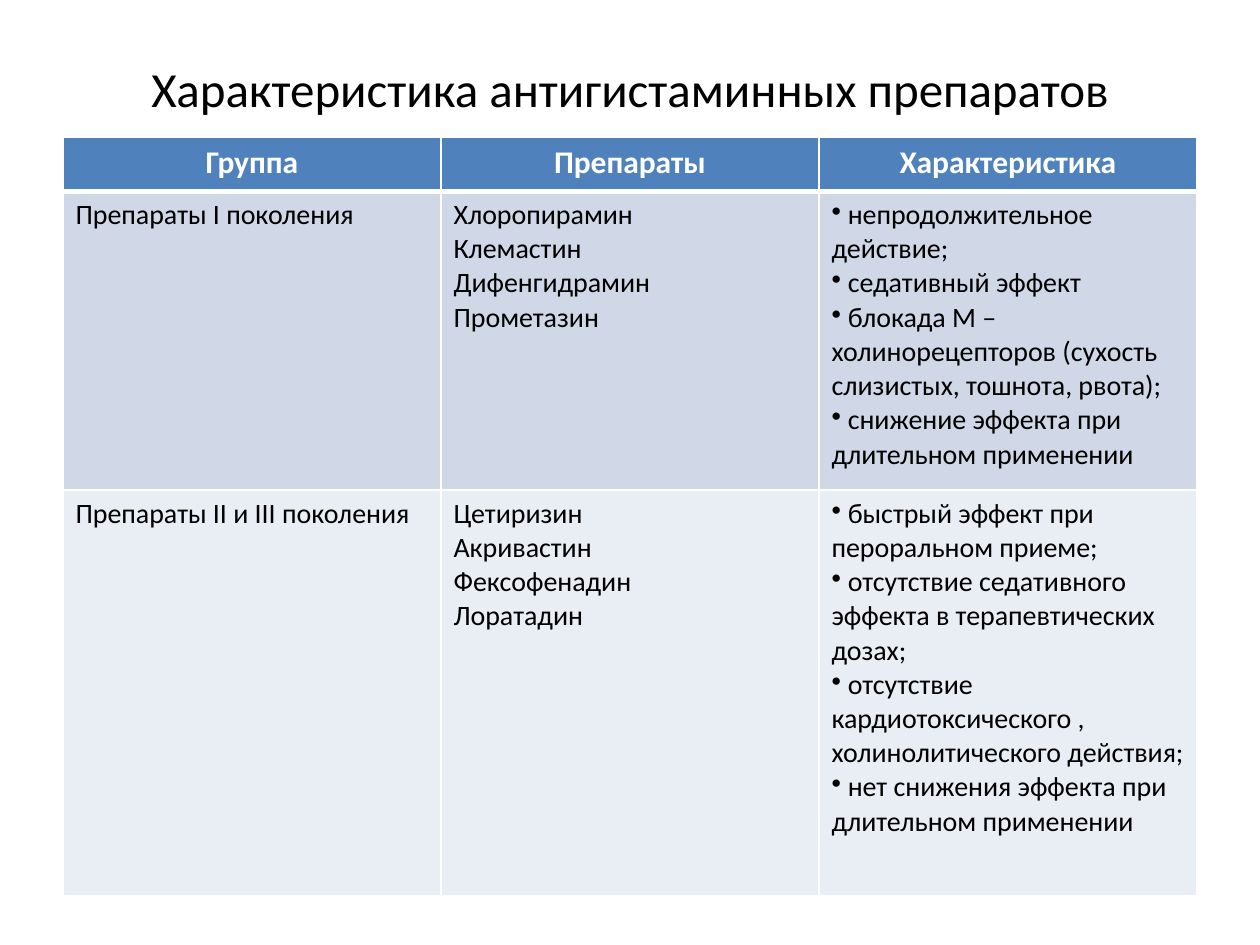
from dataclasses import dataclass

from lxml.etree import SubElement
from pptx import Presentation
from pptx.dml.color import RGBColor
from pptx.enum.text import MSO_ANCHOR, PP_ALIGN
from pptx.oxml.ns import qn
from pptx.util import Inches, Pt


@dataclass(frozen=True)
class Theme:
    font: str = "Calibri"
    title_size: int = 28
    header_size: int = 18
    body_size: int = 16
    ink: str = "000000"
    paper: str = "FFFFFF"
    header_fill: str = "4F81BD"
    band_fills: tuple = ("D0D8E8", "E9EDF4")
    thin_line: int = 1
    thick_line: int = 3


THEME = Theme()
TITLE = "Характеристика антигистаминных препаратов"
HEADERS = ("Группа", "Препараты", "Характеристика")
GROUPS = (
    (
        ("Препараты I поколения",),
        ("Хлоропирамин", "Клемастин", "Дифенгидрамин", "Прометазин"),
        (
            "непродолжительное действие;",
            "седативный эффект",
            "блокада М – холинорецепторов (сухость слизистых, тошнота, рвота);",
            "снижение эффекта при длительном применении",
        ),
    ),
    (
        ("Препараты II и III поколения",),
        ("Цетиризин", "Акривастин", "Фексофенадин", "Лоратадин"),
        (
            "быстрый эффект при пероральном приеме;",
            "отсутствие седативного эффекта в терапевтических дозах;",
            "отсутствие кардиотоксического , холинолитического действия;",
            "нет снижения эффекта при длительном применении",
        ),
    ),
)
ROW_HEIGHTS = (0.43, 2.37, 3.22)
BULLET_COLUMN = 2


def add_span(para, text, size, color, bold=False):
    span = para.add_run()
    span.text = text
    span.font.name = THEME.font
    span.font.size = Pt(size)
    span.font.bold = bold
    span.font.color.rgb = RGBColor.from_string(color)


def add_bullet(para):
    properties = para._p.get_or_add_pPr()
    properties.set("marL", "0")
    properties.set("indent", "0")
    SubElement(properties, qn("a:buChar"), char="•")


def set_borders(cell, top, bottom):
    properties = cell._tc.get_or_add_tcPr()
    widths = {"L": THEME.thin_line, "R": THEME.thin_line, "T": top, "B": bottom}
    for side, width in widths.items():
        line = SubElement(properties, qn(f"a:ln{side}"), w=str(Pt(width)))
        fill = SubElement(line, qn("a:solidFill"))
        SubElement(fill, qn("a:srgbClr"), val=THEME.paper)


def set_fill(cell, color):
    cell.fill.solid()
    cell.fill.fore_color.rgb = RGBColor.from_string(color)


def fill_header_cell(cell, text):
    set_borders(cell, THEME.thin_line, THEME.thick_line)
    set_fill(cell, THEME.header_fill)
    para = cell.text_frame.paragraphs[0]
    para.alignment = PP_ALIGN.CENTER
    add_span(para, text, THEME.header_size, THEME.paper, bold=True)


def fill_body_cell(cell, lines, color, top, bulleted):
    set_borders(cell, top, THEME.thin_line)
    set_fill(cell, color)
    frame = cell.text_frame
    for index, line in enumerate(lines):
        para = frame.add_paragraph() if index else frame.paragraphs[0]
        if bulleted:
            add_bullet(para)
            line = f" {line}"
        add_span(para, line, THEME.body_size, THEME.ink)


def place_title(page, left, top, width, height):
    title = page.shapes.title
    title.left, title.top, title.width, title.height = left, top, width, height
    frame = title.text_frame
    frame.vertical_anchor = MSO_ANCHOR.MIDDLE
    para = frame.paragraphs[0]
    para.alignment = PP_ALIGN.CENTER
    add_span(para, TITLE, THEME.title_size, THEME.ink)


def place_table(page, left, top, width, height):
    table = page.shapes.add_table(
        len(GROUPS) + 1, len(HEADERS), left, top, width, height
    ).table
    for row, row_height in zip(table.rows, ROW_HEIGHTS):
        row.height = Inches(row_height)
    for column, header in enumerate(HEADERS):
        fill_header_cell(table.cell(0, column), header)
    for row, (group, color) in enumerate(zip(GROUPS, THEME.band_fills), start=1):
        top_line = THEME.thick_line if row == 1 else THEME.thin_line
        for column, lines in enumerate(group):
            fill_body_cell(
                table.cell(row, column), lines, color, top_line,
                column == BULLET_COLUMN,
            )


def main():
    deck = Presentation()
    deck.slide_width, deck.slide_height = Inches(10), Inches(7.5)
    page = deck.slides.add_slide(deck.slide_layouts.get_by_name("Title Only"))
    place_title(page, Inches(0.5), Inches(0.3), Inches(9), Inches(0.79))
    place_table(page, Inches(0.5), Inches(1.09), Inches(9), Inches(sum(ROW_HEIGHTS)))
    deck.save("out.pptx")


if __name__ == "__main__":
    main()
